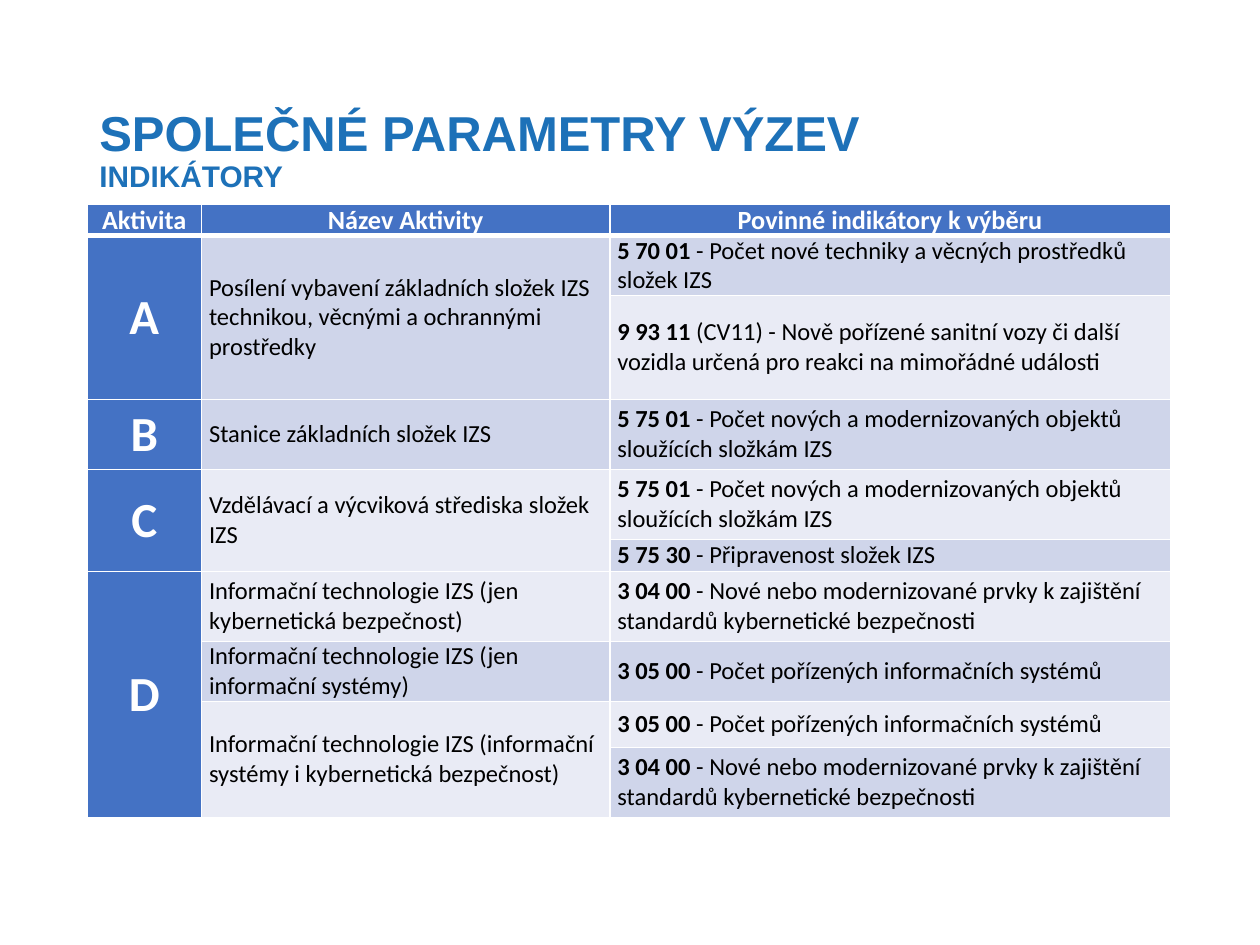
from lxml import etree
from pptx import Presentation
from pptx.dml.color import RGBColor
from pptx.enum import text
from pptx.oxml import ns
from pptx.util import Pt

COLORS = {
    "title": "1D71B8",
    "header": "4472C4",
    "odd": "CFD5EA",
    "even": "E9EBF5",
    "white": "FFFFFF",
    "black": "000000",
}


def write(paragraph, wording, size=14, color="black", bold=False, font="Calibri", align=text.PP_ALIGN.LEFT):
    paragraph.alignment = align
    run = paragraph.add_run()
    run.text = wording
    run.font.size = Pt(size)
    run.font.name = font
    run.font.bold = bold
    run.font.color.rgb = RGBColor.from_string(COLORS[color])


def add_border(cell, side, width):
    line = etree.SubElement(cell._tc.get_or_add_tcPr(), ns.qn(f"a:ln{side}"), w=str(Pt(width)))
    fill = etree.SubElement(line, ns.qn("a:solidFill"))
    etree.SubElement(fill, ns.qn("a:srgbClr"), val=COLORS["white"])


prs = Presentation()
prs.slide_width, prs.slide_height = Pt(720), Pt(540)
slide = prs.slides.add_slide(prs.slide_layouts[6])

heading = slide.shapes.add_textbox(Pt(49.7), Pt(28.8), Pt(619.2), Pt(115.2)).text_frame
heading.word_wrap = True
heading.vertical_anchor = text.MSO_ANCHOR.MIDDLE
title = heading.paragraphs[0]
title.line_spacing = 0.9
write(title, "SPOLEČNÉ PARAMETRY VÝZEV", size=28, color="title", bold=True, font="Arial")
title.add_line_break()
write(title, "INDIKÁTORY", size=17, color="title", bold=True, font="Arial")

headers = ["Aktivita", "Název Aktivity", "Povinné indikátory k výběru"]
objects = ("5 75 01 ", "- Počet nových a modernizovaných objektů sloužících složkám IZS")
systems = ("3 05 00 ", "- Počet pořízených informačních systémů")
security = ("3 04 00 ", "- Nové nebo modernizované prvky k zajištění standardů kybernetické bezpečnosti")
activities = [
    ("A", [
        ("Posílení vybavení základních složek IZS technikou, věcnými a ochrannými prostředky", [
            ("5 70 01 ", "- Počet nové techniky a věcných prostředků složek IZS"),
            ("9 93 11 ", "(CV11) - Nově pořízené sanitní vozy či další vozidla určená pro reakci na mimořádné události"),
        ]),
    ]),
    ("B", [("Stanice základních složek IZS", [objects])]),
    ("C", [
        ("Vzdělávací a výcviková střediska složek IZS", [objects, ("5 75 30 ", "- Připravenost složek IZS")]),
    ]),
    ("D", [
        ("Informační technologie IZS (jen kybernetická bezpečnost)", [security]),
        ("Informační technologie IZS (jen informační systémy)", [systems]),
        ("Informační technologie IZS (informační systémy i kybernetická bezpečnost)", [systems, security]),
    ]),
]
column_widths = [65.5, 233.3, 320.4]
row_heights = [18, 34.3, 59.3, 40, 40, 18.3, 40, 34.3, 26.3, 40]

table = slide.shapes.add_table(
    len(row_heights), len(column_widths), Pt(49.7), Pt(116.6), Pt(sum(column_widths)), Pt(sum(row_heights))
).table
for column, width in zip(table.columns, column_widths):
    column.width = Pt(width)
for row, height in zip(table.rows, row_heights):
    row.height = Pt(height)

for r in range(len(row_heights)):
    for c in range(len(column_widths)):
        cell = table.cell(r, c)
        cell.margin_left = cell.margin_right = Pt(4.3)
        cell.margin_top = cell.margin_bottom = 0
        cell.vertical_anchor = text.MSO_ANCHOR.MIDDLE
        for side in "LRTB":
            under_header = (r, side) in [(0, "B"), (1, "T")]
            add_border(cell, side, 3 if under_header else 1)
        band = "odd" if r % 2 else "even"
        cell.fill.solid()
        cell.fill.fore_color.rgb = RGBColor.from_string(COLORS["header" if r == 0 or c == 0 else band])

for c, header in enumerate(headers):
    write(table.cell(0, c).text_frame.paragraphs[0], header, size=15, color="white", bold=True,
          align=text.PP_ALIGN.CENTER)

row = 1
for letter, names in activities:
    letter_row = row
    write(table.cell(row, 0).text_frame.paragraphs[0], letter, size=28, color="white", bold=True,
          align=text.PP_ALIGN.CENTER)
    for name, indicators in names:
        name_row = row
        write(table.cell(row, 1).text_frame.paragraphs[0], name)
        for code, description in indicators:
            indicator = table.cell(row, 2).text_frame.paragraphs[0]
            write(indicator, code, bold=True)
            write(indicator, description)
            row += 1
        if row - name_row > 1:
            table.cell(name_row, 1).merge(table.cell(row - 1, 1))
    if row - letter_row > 1:
        table.cell(letter_row, 0).merge(table.cell(row - 1, 0))

prs.save("out.pptx")
